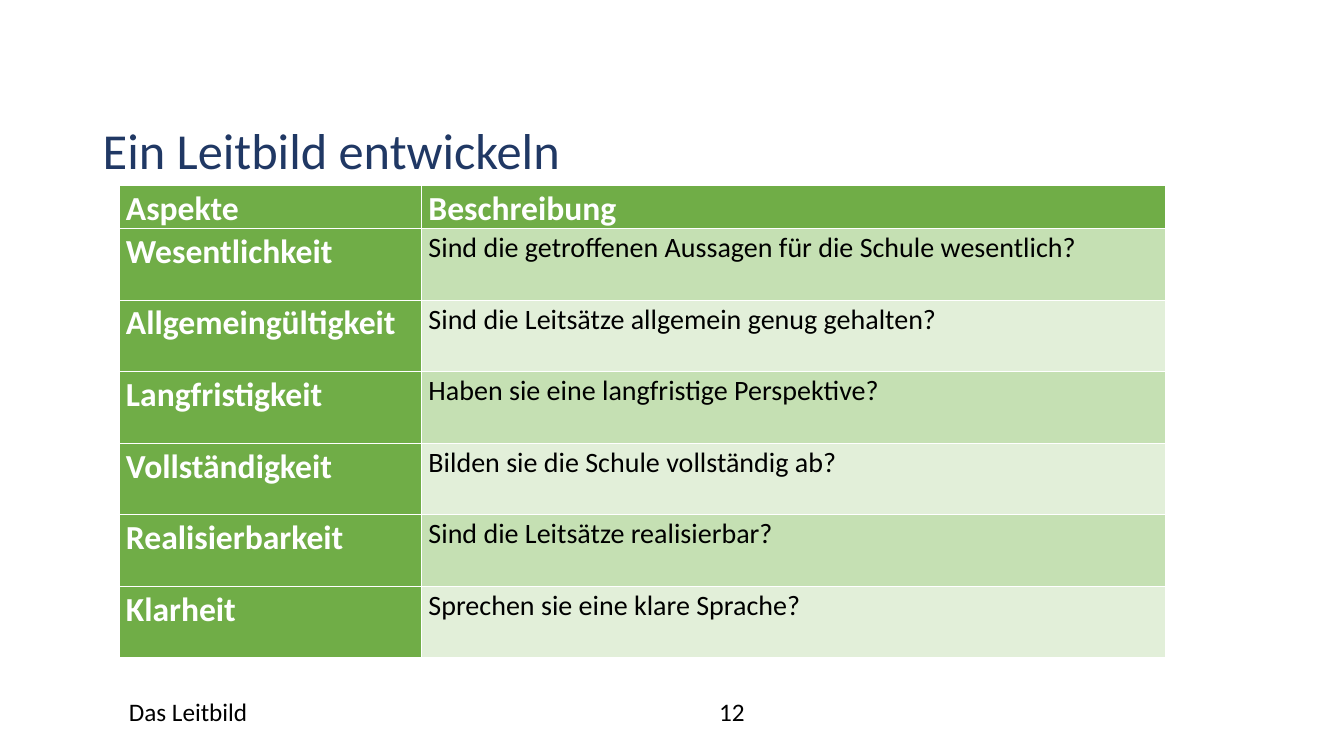
from pptx import Presentation
from pptx.dml.color import RGBColor
from pptx.enum.text import MSO_ANCHOR as Anchor, PP_ALIGN as Align
from pptx.oxml.ns import qn
from pptx.util import Inches, Pt
from lxml.etree import SubElement

FONT = "Calibri"
WHITE, BLACK, NAVY = "FFFFFF", "000000", "203864"
GREEN, MID_GREEN, PALE_GREEN = "70AD47", "C5E0B3", "E2EFD9"

TITLE = "Ein Leitbild entwickeln"
FOOTER = "Das Leitbild"
PAGE_NUMBER = "12"
ROWS = [
    ("Aspekte", "Beschreibung"),
    ("Wesentlichkeit", "Sind die getroffenen Aussagen für die Schule wesentlich?"),
    ("Allgemeingültigkeit", "Sind die Leitsätze allgemein genug gehalten?"),
    ("Langfristigkeit", "Haben sie eine langfristige Perspektive?"),
    ("Vollständigkeit", "Bilden sie die Schule vollständig ab?"),
    ("Realisierbarkeit", "Sind die Leitsätze realisierbar?"),
    ("Klarheit", "Sprechen sie eine klare Sprache?"),
]
COLUMN_WIDTHS = (3, 7.38)
HEADER_HEIGHT, ROW_HEIGHT = 0.42, 0.71
TABLE_LEFT, TABLE_TOP = 1.18, 1.84
FOOTER_TOP, FOOTER_HEIGHT = 6.86, 0.4


def color(value):
    return RGBColor.from_string(value)


def write(frame, text, size=18, ink=BLACK, bold=False, align=Align.LEFT, spacing=1.0):
    para = frame.paragraphs[0]
    para.alignment = align
    para.line_spacing = spacing
    span = para.add_run()
    span.text = text
    span.font.name = FONT
    span.font.size = Pt(size)
    span.font.bold = bold
    span.font.color.rgb = color(ink)


def add_text(page, left, top, width, height, text, **style):
    box = page.shapes.add_textbox(Inches(left), Inches(top), Inches(width), Inches(height))
    box.text_frame.word_wrap = True
    box.text_frame.vertical_anchor = Anchor.TOP
    write(box.text_frame, text, **style)


def add_borders(cell, sides):
    properties = cell._tc.get_or_add_tcPr()
    for position, side in enumerate(sides):
        line = SubElement(properties, qn(f"a:ln{side}"), w=str(Pt(1)))
        fill = SubElement(line, qn("a:solidFill"))
        SubElement(fill, qn("a:srgbClr"), val=WHITE)
        properties.remove(line)
        properties.insert(position, line)


def add_aspect_table(page):
    heights = [HEADER_HEIGHT] + [ROW_HEIGHT] * (len(ROWS) - 1)
    table = page.shapes.add_table(
        len(ROWS), len(COLUMN_WIDTHS), Inches(TABLE_LEFT), Inches(TABLE_TOP),
        Inches(sum(COLUMN_WIDTHS)), Inches(sum(heights))).table
    for column, width in zip(table.columns, COLUMN_WIDTHS):
        column.width = Inches(width)
    for row, height in zip(table.rows, heights):
        row.height = Inches(height)
    for r, texts in enumerate(ROWS):
        for c, text in enumerate(texts):
            cell = table.cell(r, c)
            heading = r == 0 or c == 0
            band = MID_GREEN if r % 2 else PALE_GREEN
            cell.fill.solid()
            cell.fill.fore_color.rgb = color(GREEN if heading else band)
            cell.margin_left = cell.margin_right = Inches(0.07)
            cell.margin_top = cell.margin_bottom = 0
            write(cell.text_frame, text, size=24 if heading else 20,
                  ink=WHITE if heading else BLACK, bold=heading, spacing=1.07)
            add_borders(cell, "LRTB" if r else ("LTB", "RTB")[c])


def main():
    deck = Presentation()
    deck.slide_width, deck.slide_height = Inches(13.33), Inches(7.5)
    page = deck.slides.add_slide(deck.slide_layouts[6])
    add_text(page, 0.92, 1.2, 11.5, 0.97, TITLE, size=36, ink=NAVY, spacing=0.9)
    add_aspect_table(page)
    add_text(page, TABLE_LEFT, FOOTER_TOP, 4.5, FOOTER_HEIGHT, FOOTER)
    add_text(page, 5.76, FOOTER_TOP, 3, FOOTER_HEIGHT, PAGE_NUMBER, align=Align.CENTER)
    deck.save("out.pptx")


if __name__ == "__main__":
    main()
